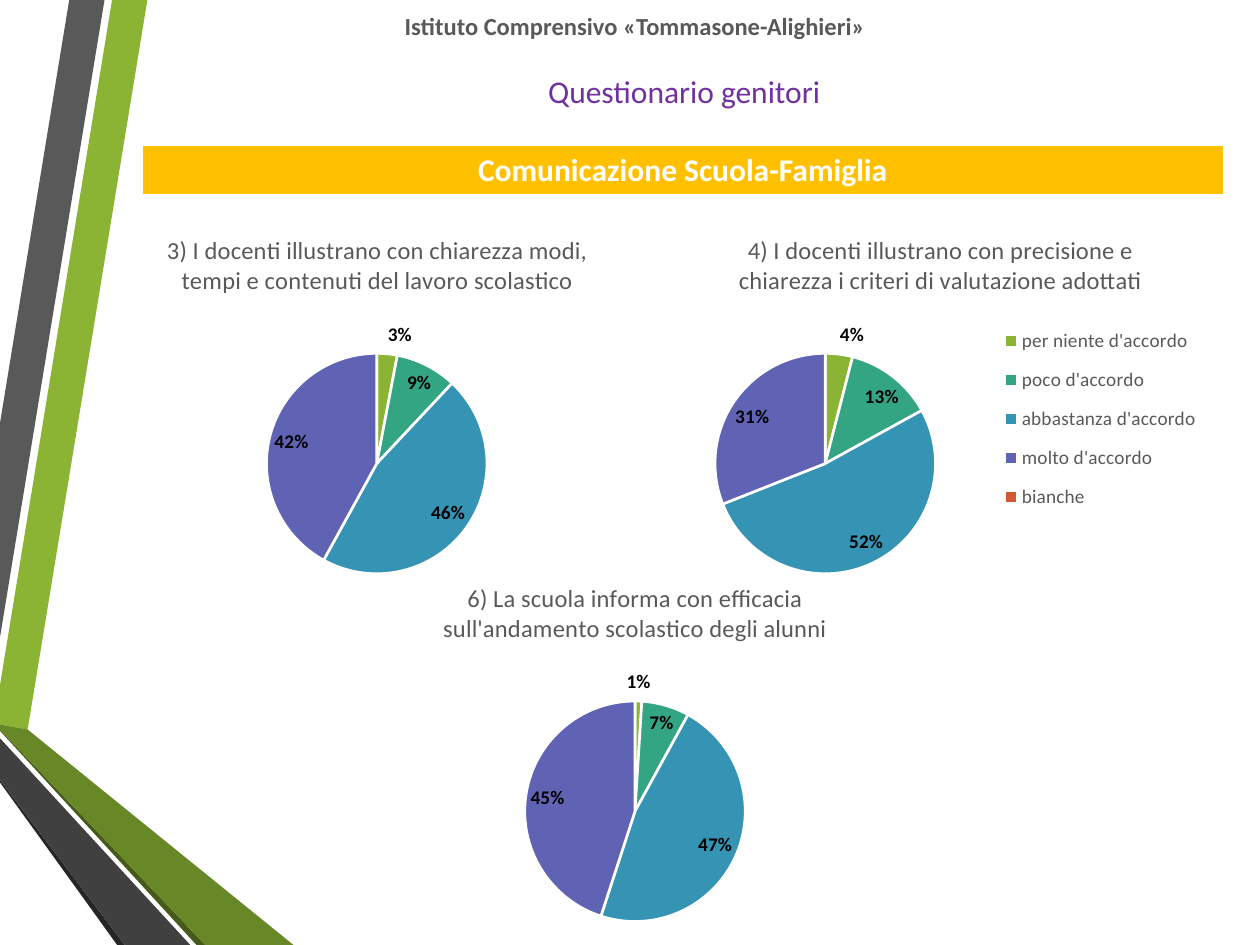
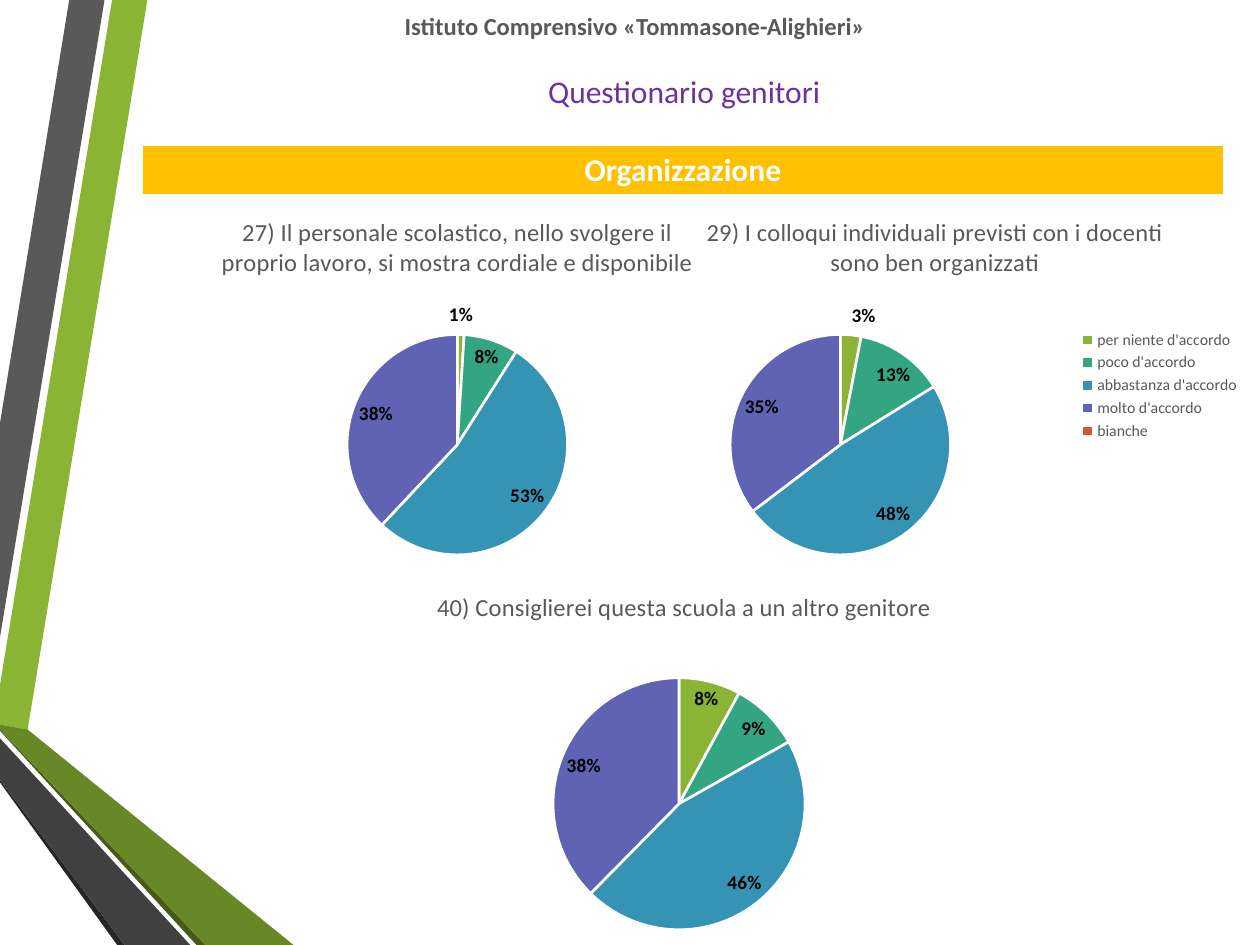
from dataclasses import dataclass
from typing import NamedTuple, Optional

from pptx import Presentation, oxml
from pptx import util as u
from pptx.chart.data import CategoryChartData
from pptx.dml.color import RGBColor
from pptx.enum import chart as charts
from pptx.enum import text
from pptx.oxml.ns import nsdecls, qn


@dataclass(frozen=True)
class Theme:
    font: str = "Calibri"
    grey: str = "595959"
    purple: str = "7030A0"
    amber: str = "FFC000"
    white: str = "FFFFFF"
    black: str = "000000"
    answers: tuple[str, ...] = ("8BB434", "33A583", "3594B4", "6063B4", "D35731")
    heading: int = 18
    body: int = 14
    label: int = 11


THEME = Theme()


class Box(NamedTuple):
    """Left, top, width and height in inches."""
    left: float
    top: float
    width: float
    height: float

    def lengths(self) -> list[u.Length]:
        return [u.Inches(value) for value in self]

    def within(self, outer: "Box") -> "Box":
        """This box as fractions of the outer one."""
        return Box((self.left - outer.left) / outer.width,
                   (self.top - outer.top) / outer.height,
                   self.width / outer.width, self.height / outer.height)


class Ribbon(NamedTuple):
    color: str
    points: tuple[tuple[float, float], ...]


class Heading(NamedTuple):
    wording: str
    box: Box
    size: int
    color: str
    bold: bool


class Legend(NamedTuple):
    box: Box
    size: int


class Question(NamedTuple):
    title: str
    box: Box
    center: tuple[float, float]
    values: tuple[int, ...]
    diameter: float = 1.75
    legend: Optional[Legend] = None
    label_blank: bool = False


class Section(NamedTuple):
    title: str
    questions: tuple[Question, ...]


RIBBONS = (
    Ribbon("8BB434", ((0, 5.44), (0, 5.75), (0.22, 5.79), (1.17, 0), (0.89, 0))),
    Ribbon("595959", ((0.83, 0), (0.55, 0), (0, 3.36), (0, 5.06))),
    Ribbon("262626", ((0, 6.19), (0, 6.21), (0.93, 7.5), (0.99, 7.5))),
    Ribbon("465A1A", ((0, 5.79), (0, 5.8), (1.56, 7.5), (1.63, 7.5))),
    Ribbon("688727", ((0, 5.79), (1.63, 7.5), (2.33, 7.5), (0.22, 5.79), (0, 5.75))),
    Ribbon("404040", ((0, 6.19), (0.99, 7.5), (1.51, 7.5), (0, 5.86))),
)
HEADINGS = (
    Heading("Istituto Comprensivo «Tommasone-Alighieri»", Box(1.14, 0.04, 7.8, 0.34),
            THEME.body, THEME.grey, True),
    Heading("Questionario genitori", Box(1.14, 0.52, 8.58, 0.4),
            THEME.heading, THEME.purple, False),
)
BAND = Box(1.13, 1.15, 8.58, 0.41)
BAND_BORDERS = {"lnL": 1, "lnR": 1, "lnT": 1, "lnB": 3}
ANSWERS = ("per niente d'accordo", "poco d'accordo", "abbastanza d'accordo",
           "molto d'accordo", "bianche")
NUMBERS = ("1", "2", "3", "4", "5")

SECTIONS = (
    Section("Comunicazione Scuola-Famiglia", (
        Question("3) I docenti illustrano con chiarezza modi, tempi e contenuti "
                 "del lavoro scolastico",
                 Box(0.67, 1.7, 4.65, 3), (2.99, 3.68), (3, 9, 46, 42, 0),
                 label_blank=True),
        Question("4) I docenti illustrano con precisione e chiarezza i criteri "
                 "di valutazione adottati",
                 Box(5.22, 1.7, 4.49, 3), (6.55, 3.68), (4, 13, 52, 31, 0),
                 legend=Legend(Box(7.86, 2.49, 1.75, 1.67), 11)),
        Question("6) La scuola informa con efficacia sull'andamento scolastico "
                 "degli alunni",
                 Box(2.54, 4.46, 5, 3), (5.04, 6.44), (1, 7, 47, 45, 0)),
    )),
    Section("Organizzazione", (
        Question("27) Il personale scolastico, nello svolgere il proprio lavoro, "
                 "si mostra cordiale e disponibile",
                 Box(1.13, 1.56, 5, 3), (3.63, 3.53), (1, 8, 53, 38, 0),
                 label_blank=True),
        Question("29) I colloqui individuali previsti con i docenti sono ben "
                 "organizzati",
                 Box(4.92, 1.56, 5, 3), (6.67, 3.53), (3, 13, 48, 35, 0),
                 legend=Legend(Box(8.52, 2.59, 1.37, 0.94), 9)),
        Question("40) Consiglierei questa scuola a un altro genitore",
                 Box(2.93, 4.53, 5, 3), (5.39, 6.38), (8, 9, 46, 38, 0),
                 diameter=2),
    )),
)


def rgb(color: str) -> RGBColor:
    return RGBColor.from_string(color)


def fill_solid(fill, color: str) -> None:
    fill.solid()
    fill.fore_color.rgb = rgb(color)


def style_font(font, size: int, color: str, bold: bool = False) -> None:
    font.name = THEME.font
    font.size = u.Pt(size)
    font.bold = bold
    font.color.rgb = rgb(color)


def write_centered(frame, wording: str, size: int, color: str, bold: bool) -> None:
    paragraph = frame.paragraphs[0]
    paragraph.alignment = text.PP_ALIGN.CENTER
    run = paragraph.add_run()
    run.text = wording
    style_font(run.font, size, color, bold)


def draw_ribbon(slide, ribbon: Ribbon) -> None:
    points = [(u.Inches(x), u.Inches(y)) for x, y in ribbon.points]
    builder = slide.shapes.build_freeform(*points[0])
    builder.add_line_segments(points[1:], close=True)
    shape = builder.convert_to_shape()
    shape.shadow.inherit = False
    fill_solid(shape.fill, ribbon.color)
    shape.line.fill.background()


def draw_heading(slide, heading: Heading) -> None:
    frame = slide.shapes.add_textbox(*heading.box.lengths()).text_frame
    frame.word_wrap = True
    frame.auto_size = text.MSO_AUTO_SIZE.SHAPE_TO_FIT_TEXT
    write_centered(frame, heading.wording, heading.size, heading.color, heading.bold)


def draw_band(slide, title: str) -> None:
    table = slide.shapes.add_table(1, 1, *BAND.lengths()).table
    table.first_row = table.horz_banding = False
    cell = table.cell(0, 0)
    write_centered(cell.text_frame, title, THEME.heading, THEME.white, True)
    properties = cell._tc.get_or_add_tcPr()
    for tag, points in BAND_BORDERS.items():
        properties.append(oxml.parse_xml(
            f'<a:{tag} {nsdecls("a")} w="{u.Pt(points)}"><a:solidFill>'
            f'<a:srgbClr val="{THEME.white}"/></a:solidFill></a:{tag}>'))
    fill_solid(cell.fill, THEME.amber)


def place_in_chart(element, index: int, area: Box, target: str = "") -> None:
    """Give a plot area or legend a fixed place, as fractions of the chart."""
    for layout in element.findall(qn("c:layout")):
        element.remove(layout)
    sizes = "".join(f'<c:{tag} val="{value:.4f}"/>' for tag, value in zip("xywh", area))
    element.insert(index, oxml.parse_xml(
        f'<c:layout {nsdecls("c")}><c:manualLayout>{target}'
        f'<c:xMode val="edge"/><c:yMode val="edge"/>{sizes}'
        f'</c:manualLayout></c:layout>'))


def style_slices(series, label_blank: bool) -> None:
    for index, color in enumerate(THEME.answers):
        slice_format = series.points[index].format
        fill_solid(slice_format.fill, color)
        slice_format.line.color.rgb = rgb(THEME.white)
        slice_format.line.width = u.Pt(1.5)
    labels = series.data_labels
    labels.show_value = False
    labels.show_percentage = True
    labels.number_format = "0%"
    labels.number_format_is_linked = False
    labels.position = charts.XL_LABEL_POSITION.BEST_FIT
    style_font(labels.font, THEME.label, THEME.black, True)
    if not label_blank:
        labels._element.insert(0, oxml.parse_xml(
            f'<c:dLbl {nsdecls("c")}><c:idx val="{len(ANSWERS) - 1}"/>'
            f'<c:delete val="1"/></c:dLbl>'))


def draw_question(slide, question: Question) -> None:
    data = CategoryChartData()
    data.categories = ANSWERS if question.legend else NUMBERS
    data.add_series(question.title, question.values)
    chart = slide.shapes.add_chart(
        charts.XL_CHART_TYPE.PIE, *question.box.lengths(), data).chart
    style_font(chart.font, 10, THEME.black)

    chart.has_title = True
    run = chart.chart_title.text_frame.paragraphs[0].add_run()
    run.text = question.title
    style_font(run.font, THEME.body, THEME.grey)
    chart.chart_title.include_in_layout = False

    plot = chart.plots[0]
    plot.vary_by_categories = True
    style_slices(plot.series[0], question.label_blank)
    center_x, center_y = question.center
    radius = question.diameter / 2
    pie = Box(center_x - radius, center_y - radius, question.diameter, question.diameter)
    place_in_chart(chart._chartSpace.chart.plotArea, 0, pie.within(question.box),
                   '<c:layoutTarget val="inner"/>')

    chart.has_legend = question.legend is not None
    if question.legend:
        chart.legend.position = charts.XL_LEGEND_POSITION.RIGHT
        chart.legend.include_in_layout = False
        style_font(chart.legend.font, question.legend.size, THEME.grey)
        place_in_chart(chart.legend._element, 1, question.legend.box.within(question.box))


def draw_section(presentation, section: Section) -> None:
    slide = presentation.slides.add_slide(presentation.slide_layouts[6])
    fill_solid(slide.background.fill, THEME.white)
    for ribbon in RIBBONS:
        draw_ribbon(slide, ribbon)
    for heading in HEADINGS:
        draw_heading(slide, heading)
    draw_band(slide, section.title)
    for question in section.questions:
        draw_question(slide, question)


def main() -> None:
    presentation = Presentation()
    presentation.slide_width = u.Inches(10)
    presentation.slide_height = u.Inches(7.5)
    for section in SECTIONS:
        draw_section(presentation, section)
    presentation.save("out.pptx")


if __name__ == "__main__":
    main()
